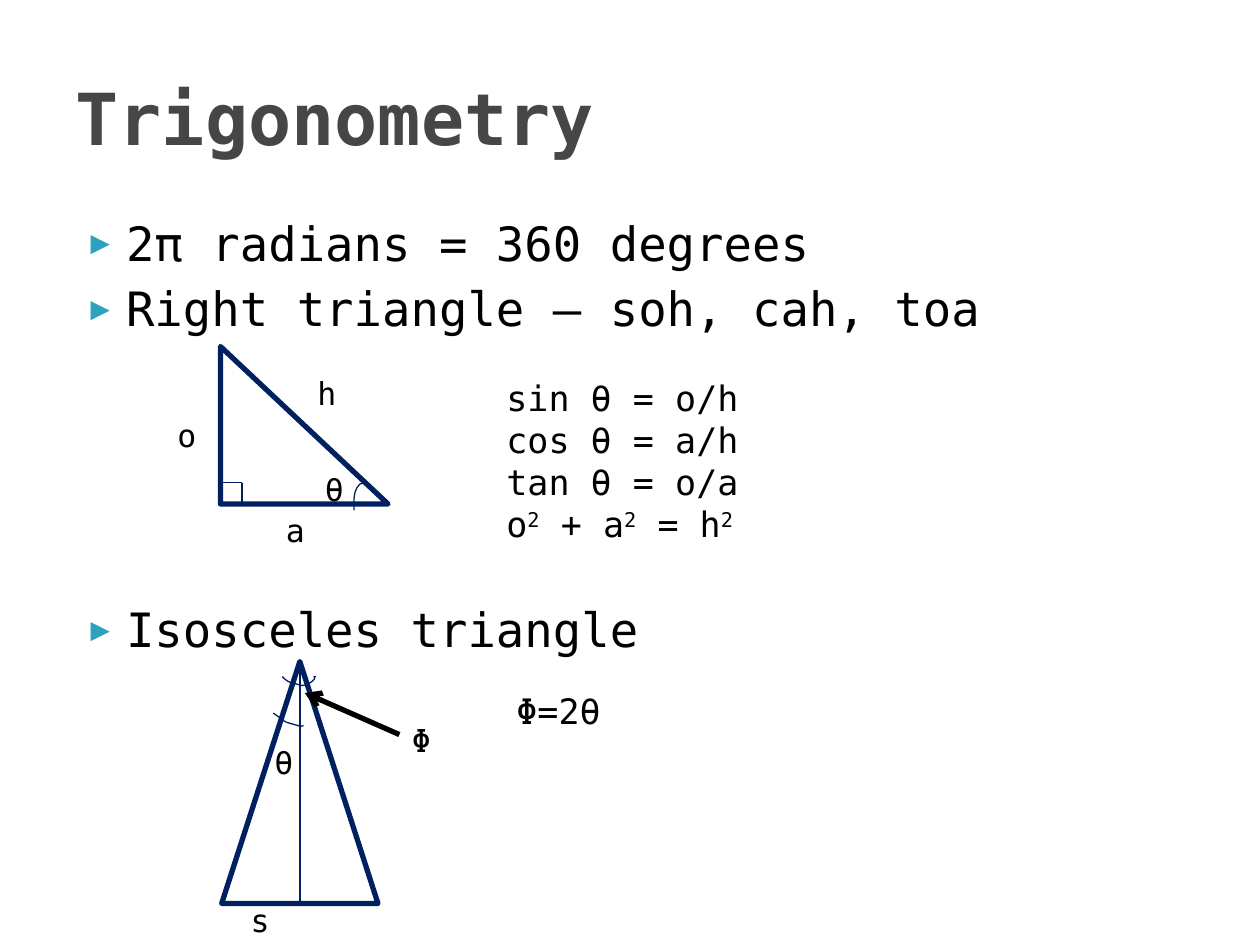
import dataclasses

import pptx
import pptx.dml.color
import pptx.enum.shapes
import pptx.enum.text
import pptx.util
from lxml import etree
from pptx.util import Inches

SHAPE = pptx.enum.shapes.MSO_SHAPE
A = "http://schemas.openxmlformats.org/drawingml/2006/main"


@dataclasses.dataclass(frozen=True)
class Theme:
    """Colours, font and sizes of the slide."""
    font: str = "DejaVu Sans Mono"
    title: str = "464646"
    text: str = "000000"
    bullet: str = "2DA2BF"
    outline: str = "002060"
    title_size: int = 41
    body_size: int = 27
    formula_size: int = 20
    label_size: int = 18
    thick: float = 3
    thin: float = 0.75


T = Theme()


def rgb(value):
    """Return the colour for a hex string."""
    return pptx.dml.color.RGBColor.from_string(value)


def sub(parent, tag, **attrs):
    """Add a DrawingML child element."""
    return etree.SubElement(parent, f"{{{A}}}{tag}", attrs)


def style_run(r, size, color=T.text, bold=False):
    """Apply font, size and colour to a run."""
    r.font.name, r.font.size, r.font.bold = T.font, pptx.util.Pt(size), bold
    r.font.color.rgb = rgb(color)


def place(sp, x, y, w, h):
    """Move and size a shape in inches."""
    sp.left, sp.top, sp.width, sp.height = map(Inches, (x, y, w, h))


def add_text(s, text, x, y, w, h, size, wrap=False):
    """Add a text box and return its text frame."""
    tf = s.shapes.add_textbox(*map(Inches, (x, y, w, h))).text_frame
    tf.word_wrap = wrap
    tf.text = text
    for p in tf.paragraphs:
        for r in p.runs:
            style_run(r, size)
    return tf


def add_labels(s, x, y, labels):
    """Add letters at offsets from a figure's corner."""
    for text, dx, dy in labels:
        add_text(s, text, x + dx, y + dy, 0.36, 0.4, T.label_size)


def set_outline(sp, width):
    """Give a shape an outline without fill or shadow."""
    sp.shadow.inherit = False
    sp.fill.background()
    sp.line.color.rgb, sp.line.width = rgb(T.outline), pptx.util.Pt(width)


def add_triangle(s, kind, x, y, w, h):
    """Add an outlined triangle."""
    set_outline(s.shapes.add_shape(kind, *map(Inches, (x, y, w, h))), T.thick)


def add_line(s, x1, y1, x2, y2, color=T.outline, width=T.thin, arrow=False):
    """Add a straight line, with an arrowhead at its end if asked."""
    c = s.shapes.add_connector(pptx.enum.shapes.MSO_CONNECTOR.STRAIGHT,
                               *map(Inches, (x1, y1, x2, y2)))
    c.line.color.rgb, c.line.width = rgb(color), pptx.util.Pt(width)
    if arrow:
        sub(c.line._get_or_add_ln(), "tailEnd", type="arrow")
    sub(c._element.spPr, "effectLst")


def add_curve(s, x, y, start, *segments, steps=8):
    """Add an open outline through cubic segments at offsets from a corner."""
    points = [start]
    for a, b, end in segments:
        p0 = points[-1]
        for t in (i / steps for i in range(1, steps + 1)):
            u = 1 - t
            points.append(tuple(
                u**3 * p0[k] + 3 * u * u * t * a[k] + 3 * u * t * t * b[k] + t**3 * end[k]
                for k in (0, 1)))
    points = [(Inches(x + dx), Inches(y + dy)) for dx, dy in points]
    fb = s.shapes.build_freeform(*points[0], scale=1.0)
    fb.add_line_segments(points[1:], close=False)
    set_outline(fb.convert_to_shape(), T.thin)


def add_title(s, x, y, w, h):
    """Fill the title placeholder."""
    sp = s.shapes.title
    place(sp, x, y, w, h)
    tf = sp.text_frame
    tf.text = "Trigonometry"
    tf.vertical_anchor = pptx.enum.text.MSO_ANCHOR.MIDDLE
    p = tf.paragraphs[0]
    p.alignment = pptx.enum.text.PP_ALIGN.LEFT
    style_run(p.runs[0], T.title_size, T.title, True)


def add_body(s, x, y, w, h):
    """Fill the body placeholder, leaving room for the first figure."""
    sp = s.placeholders[1]
    place(sp, x, y, w, h)
    tf = sp.text_frame
    tf.auto_size = pptx.enum.text.MSO_AUTO_SIZE.NONE
    items = (("2π radians = 360 degrees", 0),
             ("Right triangle – soh, cah, toa", 5),
             ("Isosceles triangle", 151))
    tf.text = "\n".join(text for text, _ in items)
    for p, (_, gap) in zip(tf.paragraphs, items):
        pPr = p._p.get_or_add_pPr()
        pPr.set("marL", str(Inches(0.4)))
        pPr.set("indent", str(Inches(-0.28)))
        sub(sub(pPr, "buClr"), "srgbClr", val=T.bullet)
        sub(pPr, "buSzPct", val="68000")
        sub(pPr, "buFont", typeface=T.font)
        sub(pPr, "buChar", char="▶")
        p.space_before = pptx.util.Pt(gap)
        style_run(p.runs[0], T.body_size)


def add_right_triangle(s, x, y, w, h):
    """Draw the right triangle with its angles and side names."""
    mark = 0.17
    add_triangle(s, SHAPE.RIGHT_TRIANGLE, x, y, w, h)
    add_line(s, x, y + h - mark, x + mark, y + h - mark)
    add_line(s, x + mark, y + h - mark, x + mark, y + h)
    add_curve(s, x, y, (1.17, 1.08),
              ((1.14, 1.09), (1.11, 1.08), (1.1, 1.1)),
              ((1.05, 1.15), (1.06, 1.24), (1.06, 1.3)))
    add_labels(s, x, y, (("θ", 0.73, 0.93), ("o", -0.44, 0.5),
                         ("a", 0.42, 1.26), ("h", 0.67, 0.17)))


def add_isosceles_triangle(s, x, y, w, h):
    """Draw the isosceles triangle with its bisector and angles."""
    mid = x + w / 2
    add_triangle(s, SHAPE.ISOSCELES_TRIANGLE, x, y, w, h)
    add_line(s, mid, y, mid, y + h)
    add_curve(s, x, y, (0.41, 0.41),
              ((0.54, 0.5), (0.47, 0.47), (0.61, 0.51)),
              ((0.62, 0.52), (0.64, 0.51), (0.65, 0.51)))
    add_curve(s, x, y, (0.48, 0.12),
              ((0.49, 0.13), (0.51, 0.15), (0.53, 0.16)),
              ((0.56, 0.17), (0.63, 0.19), (0.63, 0.19)),
              ((0.65, 0.19), (0.68, 0.19), (0.7, 0.17)),
              ((0.78, 0.12), (0.7, 0.12), (0.75, 0.12)))
    add_line(s, x + 1.41, y + 0.58, x + 0.66, y + 0.25, T.text, T.thick, arrow=True)
    add_labels(s, x, y, (("θ", 0.32, 0.6), ("Φ", 1.41, 0.42), ("s", 0.13, 1.85)))


def add_formulas(s, x, y, w, h):
    """List the ratios and the theorem with raised exponents."""
    tf = add_text(s, "sin θ = o/h\ncos θ = a/h\ntan θ = o/a", x, y, w, h,
                  T.formula_size, wrap=True)
    p = tf.add_paragraph()
    for base in ("o", " + a", " = h"):
        for text in (base, "2"):
            r = p.add_run()
            r.text = text
            style_run(r, T.formula_size)
            if text == "2":
                r.font._element.set("baseline", "30000")


def main():
    """Build and save the slide."""
    prs = pptx.Presentation()
    prs.slide_width, prs.slide_height = Inches(10), Inches(7.5)
    s = prs.slides.add_slide(prs.slide_layouts[1])
    add_title(s, 0.5, 0.3, 9, 1.25)
    add_body(s, 0.5, 1.65, 9, 4.95)
    add_right_triangle(s, 1.75, 2.75, 1.33, 1.25)
    add_formulas(s, 3.92, 2.94, 2.58, 1.45)
    add_isosceles_triangle(s, 1.76, 5.25, 1.24, 1.92)
    add_text(s, "Φ=2θ", 4, 5.42, 2.58, 0.44, T.formula_size, wrap=True)
    prs.save("out.pptx")


if __name__ == "__main__":
    main()
